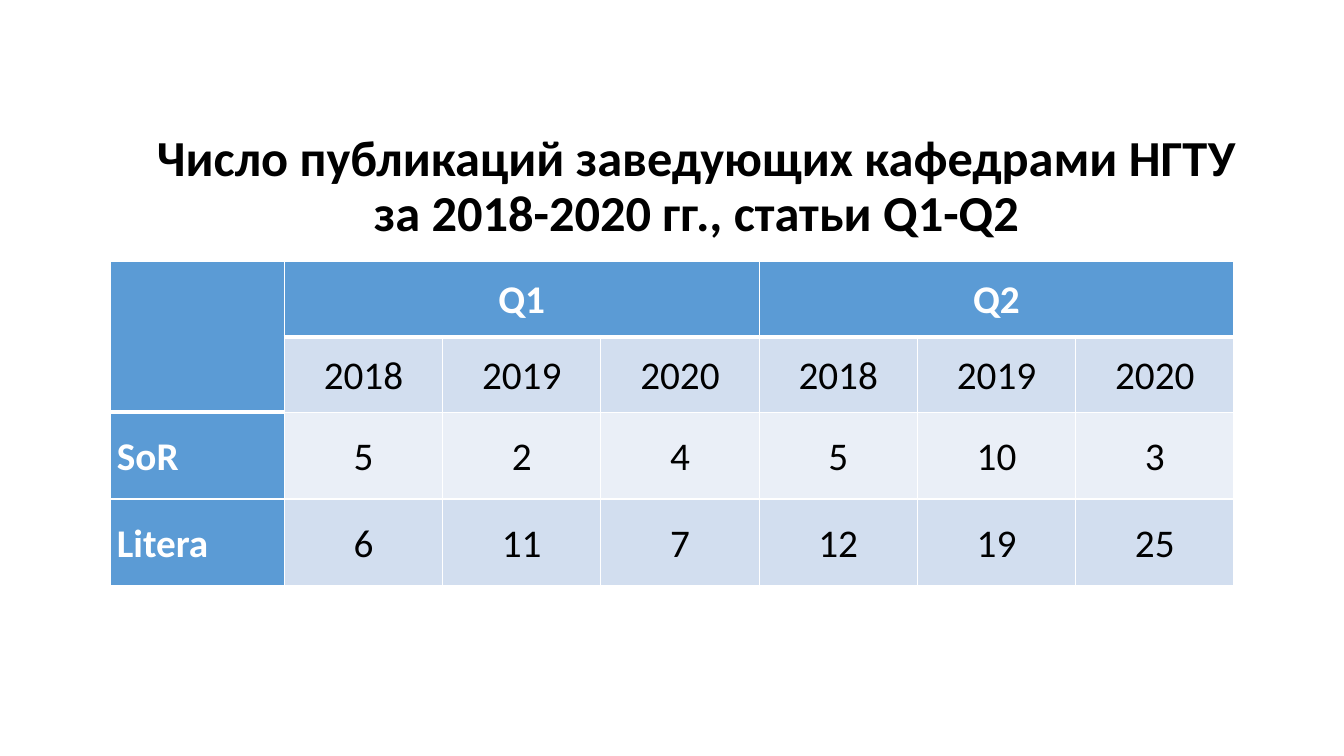
from lxml.etree import SubElement
from pptx import Presentation
from pptx.dml.color import RGBColor
from pptx.enum.text import MSO_ANCHOR as Anchor, MSO_AUTO_SIZE as AutoSize, PP_ALIGN as Align
from pptx.oxml.ns import qn
from pptx.util import Inches, Pt

FONT = "Calibri"
WHITE, BLACK = "FFFFFF", "000000"
HEADER, BAND_DARK, BAND_LIGHT = "5B9BD5", "D2DEEF", "EAEFF7"

HEADING = ["Число публикаций заведующих кафедрами НГТУ", "за 2018-2020 гг., статьи Q1-Q2"]
QUARTILES = ["Q1", "Q2"]
YEARS = ["2018", "2019", "2020"]
DATABASES = {
    "SoR": [5, 2, 4, 5, 10, 3],
    "Litera": [6, 11, 7, 12, 19, 25],
}
LABEL_WIDTH, YEAR_WIDTH = 1.73, 1.57
HEADER_HEIGHT, DATABASE_HEIGHT = 0.75, 0.86
THIN, THICK = 1, 3


def color(hex_value):
    return RGBColor.from_string(hex_value)


def write(paragraph, text, size, ink, bold, align, spacing):
    paragraph.alignment = align
    paragraph.line_spacing = spacing
    paragraph.space_before = Pt(0)
    run = paragraph.add_run()
    run.text = text
    run.font.name = FONT
    run.font.size = Pt(size)
    run.font.bold = bold
    run.font.color.rgb = color(ink)


def add_heading(slide, left, top, width, height):
    heading = slide.shapes.title
    heading.left, heading.top = Inches(left), Inches(top)
    heading.width, heading.height = Inches(width), Inches(height)
    frame = heading.text_frame
    frame.word_wrap = True
    frame.auto_size = AutoSize.NONE
    frame.vertical_anchor = Anchor.TOP
    for index, line in enumerate(HEADING):
        paragraph = frame.add_paragraph() if index else frame.paragraphs[0]
        write(paragraph, line, 36, BLACK, True, Align.CENTER, 0.9)


def style_cell(cell, fill, top, bottom):
    properties = cell._tc.get_or_add_tcPr()
    for side, width in zip("LRTB", (THIN, THIN, top, bottom)):
        border = SubElement(properties, qn(f"a:ln{side}"), w=str(Pt(width)))
        paint = SubElement(border, qn("a:solidFill"))
        SubElement(paint, qn("a:srgbClr"), val=WHITE)
    cell.fill.solid()
    cell.fill.fore_color.rgb = color(fill)
    cell.vertical_anchor = Anchor.MIDDLE
    cell.margin_left = cell.margin_right = Inches(0.07)
    cell.margin_top = cell.margin_bottom = 0


def add_publications(slide, left, top):
    span = len(YEARS)
    quartile_row = [""]
    for quartile in QUARTILES:
        quartile_row += [quartile] + [""] * (span - 1)
    rows = [quartile_row, [""] + YEARS * len(QUARTILES)]
    rows += [[name, *map(str, counts)] for name, counts in DATABASES.items()]
    widths = [LABEL_WIDTH] + [YEAR_WIDTH] * (span * len(QUARTILES))
    heights = [HEADER_HEIGHT] * 2 + [DATABASE_HEIGHT] * len(DATABASES)

    publications = slide.shapes.add_table(
        len(rows), len(widths), Inches(left), Inches(top),
        Inches(sum(widths)), Inches(sum(heights))).table
    for column, width in zip(publications.columns, widths):
        column.width = Inches(width)
    for row, height in zip(publications.rows, heights):
        row.height = Inches(height)

    for r, texts in enumerate(rows):
        for c, text in enumerate(texts):
            cell = publications.cell(r, c)
            is_header = r == 0 or c == 0
            fill = HEADER if is_header else BAND_DARK if r % 2 else BAND_LIGHT
            header_end = 1 if c == 0 else 0
            style_cell(cell, fill,
                       THICK if r == header_end + 1 else THIN,
                       THICK if r in (0, header_end) else THIN)
            if text:
                write(cell.text_frame.paragraphs[0], text, 28,
                      WHITE if is_header else BLACK, is_header,
                      Align.CENTER if c else Align.LEFT, 1.07)

    publications.cell(0, 0).merge(publications.cell(1, 0))
    for start in range(1, len(widths), span):
        publications.cell(0, start).merge(publications.cell(0, start + span - 1))


def main():
    deck = Presentation()
    deck.slide_width, deck.slide_height = Inches(13.33), Inches(7.5)
    slide = deck.slides.add_slide(deck.slide_layouts[5])
    add_publications(slide, 1.09, 2.59)
    add_heading(slide, 1.41, 1.27, 11, 1.12)
    deck.save("out.pptx")


if __name__ == "__main__":
    main()
